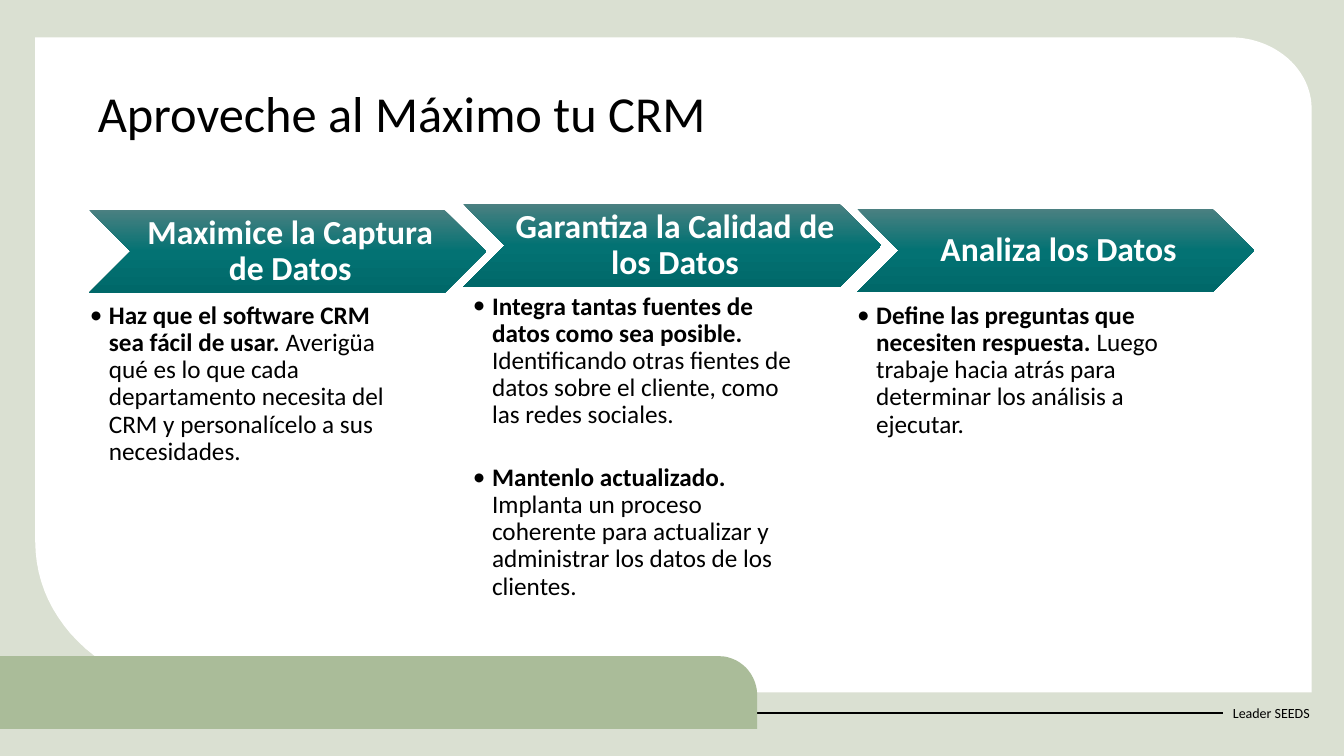
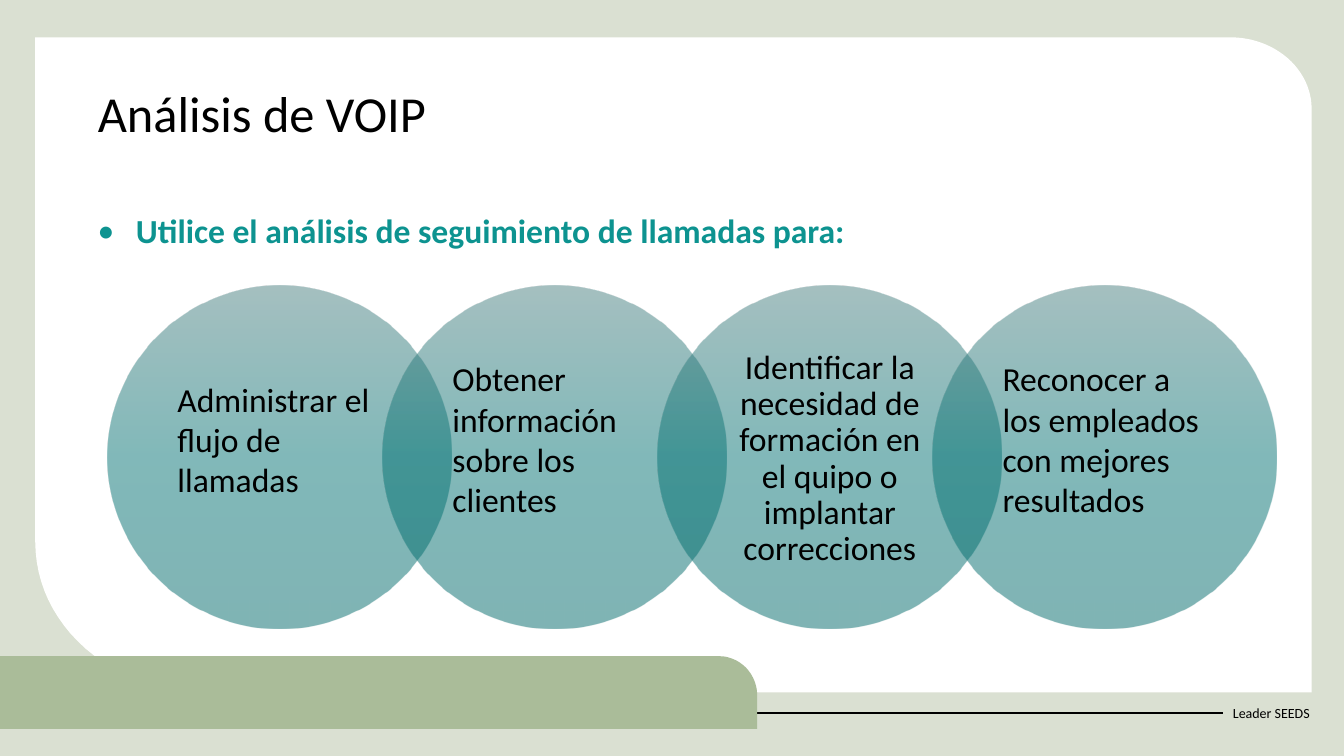
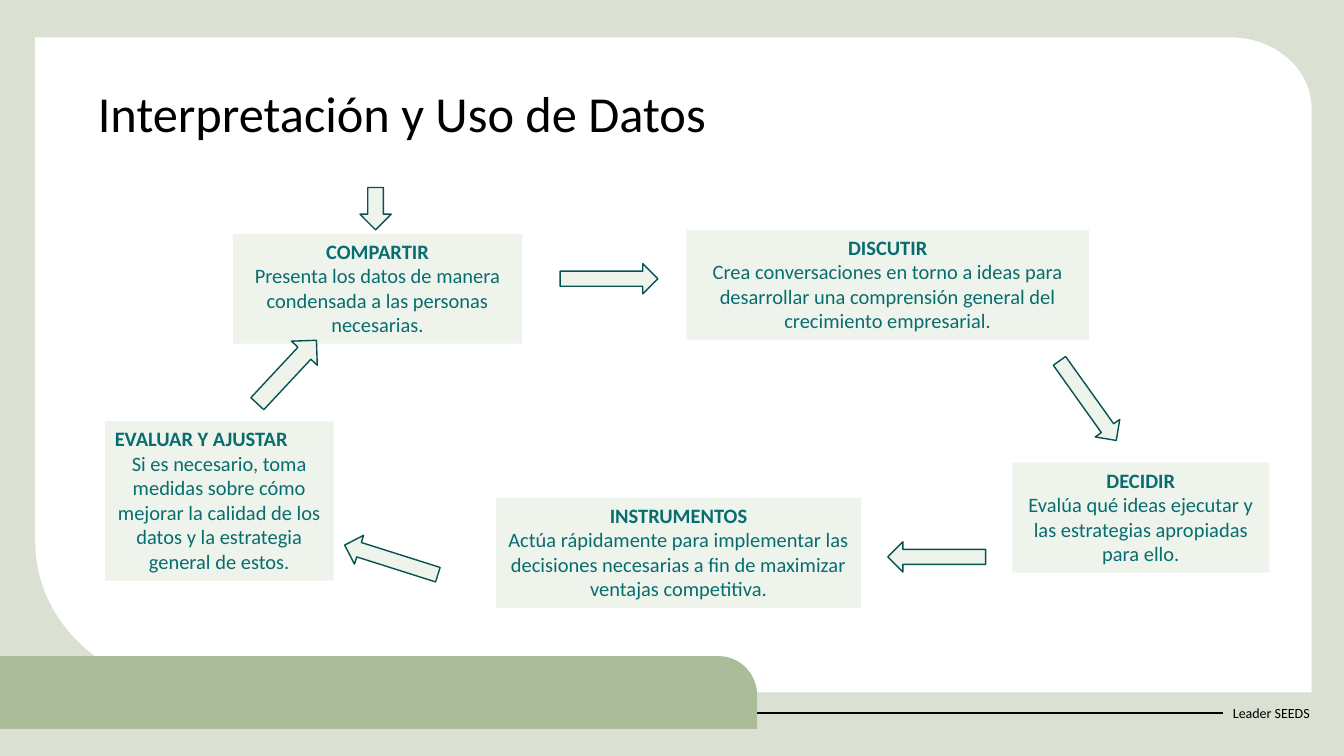
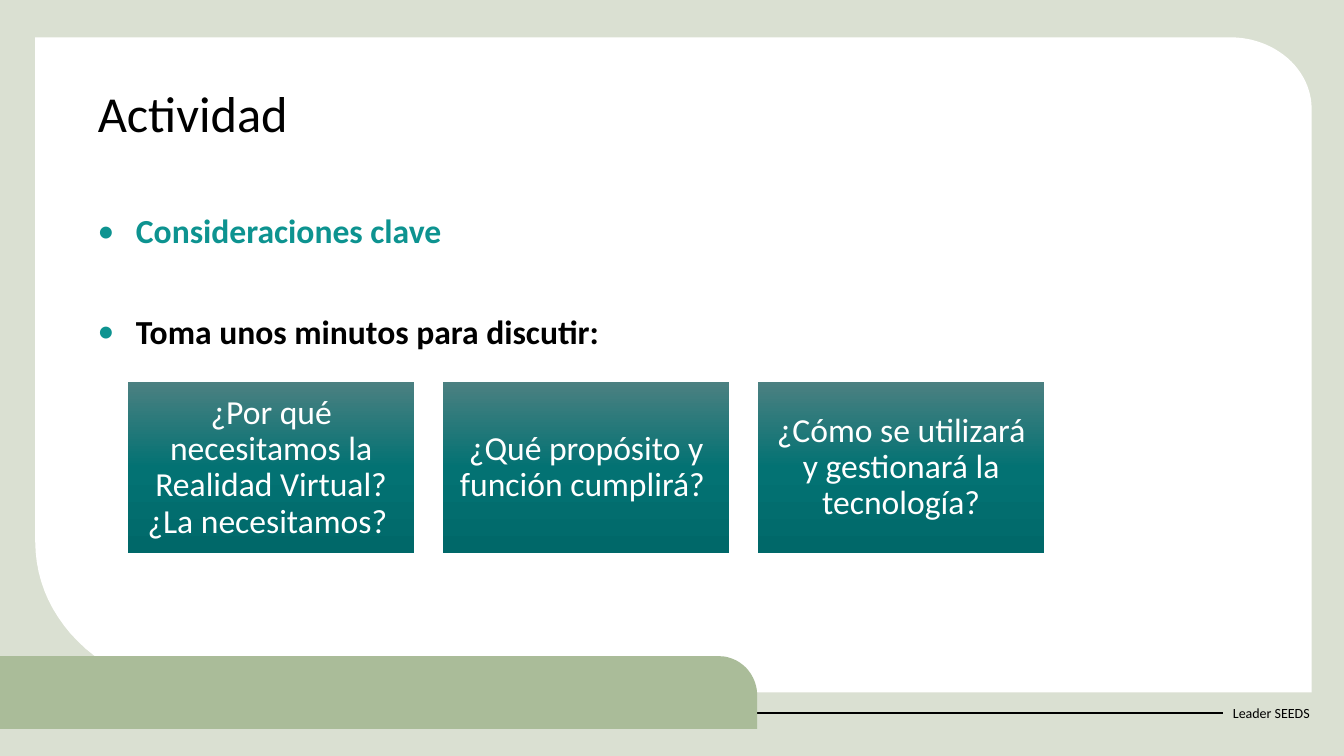
from dataclasses import dataclass
from math import cos, radians, sin

from lxml.etree import SubElement
from pptx import Presentation
from pptx.dml.color import RGBColor
from pptx.enum.shapes import MSO_CONNECTOR, MSO_SHAPE
from pptx.enum.text import MSO_ANCHOR, MSO_AUTO_SIZE, PP_ALIGN
from pptx.oxml.ns import qn
from pptx.util import Inches, Pt

WIDTH, HEIGHT = 13.33, 7.5
FONT = "Calibri"
BLACK, WHITE = "000000", "FFFFFF"
SAGE, LEAF, MIST = "DAE0D2", "AABC99", "EEF3EB"
TEAL, DEEP_TEAL, OUTLINE = "0D9390", "086D6E", "065151"
GRADIENT = {0: "4B8081", 50: "037273", 100: "006869"}
LEFT, CENTER = PP_ALIGN.LEFT, PP_ALIGN.CENTER
TOP, MIDDLE = MSO_ANCHOR.TOP, MSO_ANCHOR.MIDDLE
DEFAULT_INSETS = (0.1, 0.05, 0.1, 0.05)
UNITS_PER_INCH = 1000


@dataclass
class Para:
    """A paragraph whose spans are (text, bold) pairs."""
    spans: list
    align: PP_ALIGN = LEFT
    spacing: float = 0.9
    before: float = 0
    indent: float = 0
    bullet_color: str = BLACK
    color: str = BLACK


def rgb(value):
    return RGBColor.from_string(value)


def set_values(target, values):
    for name, value in values.items():
        setattr(target, name, value)


def place(shape, left, top, width, height):
    set_values(shape, {"left": Inches(left), "top": Inches(top),
                       "width": Inches(width), "height": Inches(height)})


def add_bullet(para, indent, color):
    props = para._p.get_or_add_pPr()
    props.set("marL", str(Inches(indent)))
    props.set("indent", str(-Inches(indent)))
    SubElement(SubElement(props, qn("a:buClr")), qn("a:srgbClr"), val=color)
    SubElement(props, qn("a:buFont"), typeface=FONT)
    SubElement(props, qn("a:buChar"), char="•")


def write(frame, paras, size, anchor=TOP, insets=DEFAULT_INSETS):
    set_values(frame, {"word_wrap": True, "auto_size": MSO_AUTO_SIZE.NONE,
                       "vertical_anchor": anchor})
    sides = ("left", "top", "right", "bottom")
    set_values(frame, {f"margin_{side}": Inches(inset) for side, inset in zip(sides, insets)})
    for index, item in enumerate(paras):
        para = frame.add_paragraph() if index else frame.paragraphs[0]
        if item.indent:
            add_bullet(para, item.indent, item.bullet_color)
        set_values(para, {"alignment": item.align, "line_spacing": item.spacing,
                          "space_before": Pt(item.before), "space_after": Pt(0)})
        for text, bold in item.spans:
            span = para.add_run()
            span.text = text
            set_values(span.font, {"name": FONT, "size": Pt(size), "bold": bold})
            span.font.color.rgb = rgb(item.color)


def add_text(page, area, paras, size, **options):
    box = page.shapes.add_textbox(*map(Inches, area))
    write(box.text_frame, paras, size, **options)
    return box


def add_solid(page, kind, area, fill, line=None):
    shape = page.shapes.add_shape(kind, *map(Inches, area))
    paint(shape, fill, line)
    return shape


def paint(shape, fill, line=None):
    shape.shadow.inherit = False
    shape.fill.solid()
    shape.fill.fore_color.rgb = rgb(fill)
    if line:
        shape.line.color.rgb = rgb(line)
        shape.line.width = Pt(1)
    else:
        shape.line.fill.background()


def add_gradient(page, kind, area, opacity=100):
    shape = page.shapes.add_shape(kind, *map(Inches, area))
    shape.shadow.inherit = False
    shape.line.fill.background()
    shape.fill.gradient()
    shape.fill.gradient_angle = 270
    stops = next(shape._element.spPr.iter(qn("a:gsLst")))
    for stop in list(stops):
        stops.remove(stop)
    for position, value in GRADIENT.items():
        stop = SubElement(stops, qn("a:gs"), pos=str(position * 1000))
        color = SubElement(stop, qn("a:srgbClr"), val=value)
        if opacity < 100:
            SubElement(color, qn("a:alpha"), val=str(opacity * 1000))
    return shape


def corner(center_x, center_y, radius_x, radius_y, start, steps=24):
    """Points of a quarter ellipse, clockwise from the start angle in degrees."""
    angles = [radians(start + 90 * step / steps) for step in range(steps + 1)]
    return [(center_x + radius_x * cos(angle), center_y + radius_y * sin(angle))
            for angle in angles]


def add_outline(page, points, fill):
    """A closed outline; whole-number units keep its curves fine."""
    units = [(round(x * UNITS_PER_INCH), round(y * UNITS_PER_INCH)) for x, y in points]
    builder = page.shapes.build_freeform(*units[0], scale=Inches(1) / UNITS_PER_INCH)
    builder.add_line_segments(units[1:], close=True)
    shape = builder.convert_to_shape()
    paint(shape, fill)
    return shape


def build_frame(layout, page):
    """Draw the shared frame on a page and move it to the layout."""
    layout.background.fill.solid()
    layout.background.fill.fore_color.rgb = rgb(SAGE)
    for holder in list(layout.placeholders)[1:]:
        holder._element.getparent().remove(holder._element)

    panel = add_outline(page, [(0.35, 0.37), *corner(12.2, 1.08, 0.81, 0.71, 270),
                               (13.01, 6.87), *corner(2.05, 5.38, 1.7, 1.49, 90)], WHITE)
    footer = add_text(page, (12.13, 6.87, 1.01, 0.4),
                      [Para([("Leader SEEDS", False)], spacing=1)], 10, anchor=MIDDLE)
    rule = page.shapes.add_connector(MSO_CONNECTOR.STRAIGHT, 0, Inches(7.07),
                                     Inches(12.13), Inches(7.07))
    rule.line.color.rgb = rgb(BLACK)
    rule.line.width = Pt(1.5)
    SubElement(rule._element.spPr, qn("a:effectLst"))
    tab = add_outline(page, [(0, 7.23), (0, 6.51), *corner(7.13, 6.9, 0.38, 0.39, 270),
                             (7.51, 7.23)], LEAF)
    for shape in (panel, footer, rule, tab):
        layout.shapes._spTree.append(shape._element)


def add_page(deck, title):
    page = deck.slides.add_slide(deck.slide_layouts[5])
    place(page.shapes.title, 0.87, 0.83, 11.59, 0.88)
    write(page.shapes.title.text_frame, [Para([(title, False)])], 36)
    return page


def add_points(page, points):
    """Bold bulleted lines, given as (text, color) pairs, under the title."""
    paras = [Para([(text, True)], before=46 if index else 0, indent=0.38,
                  bullet_color=TEAL, color=color)
             for index, (text, color) in enumerate(points)]
    add_text(page, (0.87, 2.08, 11.59, 1.6), paras, 24)


def add_chevron_column(page, chevron, heading, body, items):
    shape = add_gradient(page, MSO_SHAPE.CHEVRON, (*chevron, 0.83))
    write(shape.text_frame, [Para([(heading, True)], CENTER, color=WHITE)], 24,
          anchor=MIDDLE, insets=(0.1, 0.04, 0.04, 0.04))
    paras = [Para([(lead, True), (rest, False)], indent=0.19, before=25 if index else 0)
             for index, (lead, rest) in enumerate(items)]
    add_text(page, (*body, 3.18, 3.25), paras, 18, insets=(0, 0, 0, 0))


def add_circles(page, labels, size=3.41):
    for index, (text, align) in enumerate(labels):
        circle = add_gradient(page, MSO_SHAPE.OVAL,
                              (1.07 + 0.8 * size * index, 2.83, size, size), opacity=50)
        spacing, bottom = (0.9, 0.03) if align == CENTER else (1, 0.43)
        write(circle.text_frame, [Para([(text, False)], align, spacing)], 24,
              anchor=MIDDLE, insets=(0.19, 0.07, 0.19, bottom))


def add_step(page, area, heading, text, heading_align=CENTER):
    box = add_solid(page, MSO_SHAPE.RECTANGLE, area, MIST)
    write(box.text_frame, [Para([(heading, True)], heading_align, 1, color=DEEP_TEAL),
                           Para([(text, False)], CENTER, 1, color=DEEP_TEAL)], 14.6)


def add_arrow(page, area, rotation):
    arrow = add_solid(page, MSO_SHAPE.DOWN_ARROW, area, MIST, OUTLINE)
    arrow.rotation = rotation


def add_questions(page, questions, width=2.84):
    for index, question in enumerate(questions):
        box = add_gradient(page, MSO_SHAPE.RECTANGLE,
                           (1.27 + 1.1 * width * index, 3.79, width, 1.7))
        write(box.text_frame, [Para([(question, False)], CENTER, color=WHITE)], 24,
              anchor=MIDDLE, insets=(0.1, 0.1, 0.1, 0.1))


def fill_crm(page):
    add_chevron_column(page, (0.88, 2.08, 3.94), "Maximice la Captura de Datos", (0.89, 3), [
        ("Haz que el software CRM sea fácil de usar. ",
         "Averigüa qué es lo que cada departamento necesita del CRM "
         "y personalícelo a sus necesidades.")])
    add_chevron_column(page, (4.59, 2.02, 4.15), "Garantiza la Calidad de los Datos", (4.69, 2.91), [
        ("Integra tantas fuentes de datos como sea posible. ",
         "Identificando otras fientes de datos sobre el cliente, como las redes sociales."),
        ("Mantenlo actualizado. ",
         "Implanta un proceso coherente para actualizar y administrar los datos de los clientes.")])
    add_chevron_column(page, (8.5, 2.07, 3.94), "Analiza los Datos", (8.5, 3), [
        ("Define las preguntas que necesiten respuesta. ",
         "Luego trabaje hacia atrás para determinar los análisis a ejecutar.")])


def fill_voip(page):
    add_points(page, [("Utilice el análisis de seguimiento de llamadas para:", TEAL)])
    add_circles(page, [
        ("Administrar el flujo de llamadas", LEFT),
        ("Obtener información sobre los clientes", LEFT),
        ("Identificar la necesidad de formación en el quipo o implantar correcciones", CENTER),
        ("Reconocer a los empleados con mejores resultados", LEFT)])


def fill_cycle(page):
    steps = [
        ((1.04, 4.18, 2.27, 1.58), "EVALUAR Y AJUSTAR",
         "Si es necesario, toma medidas sobre cómo mejorar la calidad de los datos "
         "y la estrategia general de estos.", LEFT),
        ((2.31, 2.32, 2.87, 1.09), "COMPARTIR",
         "Presenta los datos de manera condensada a las personas necesarias."),
        ((6.81, 2.28, 3.99, 1.09), "DISCUTIR",
         "Crea conversaciones en torno a ideas para desarrollar una comprensión general "
         "del crecimiento empresarial."),
        ((10.04, 4.59, 2.55, 1.09), "DECIDIR",
         "Evalúa qué ideas ejecutar y las estrategias apropiadas para ello."),
        ((4.92, 4.94, 3.62, 1.09), "INSTRUMENTOS",
         "Actúa rápidamente para implementar las decisiones necesarias a fin de maximizar "
         "ventajas competitiva."),
    ]
    for step in steps:
        add_step(page, *step)
    arrows = [
        ((10.64, 3.49, 0.3, 0.97), 324.5),
        ((5.89, 2.28, 0.3, 0.97), 270),
        ((3.73, 5.07, 0.3, 0.97), 107.6),
        ((9.14, 5.04, 0.3, 0.97), 90),
        ((3.57, 1.86, 0.31, 0.42), 0),
        ((2.67, 3.26, 0.35, 0.86), 223),
    ]
    for arrow in arrows:
        add_arrow(page, *arrow)


def fill_activity(page):
    add_points(page, [("Consideraciones clave", TEAL),
                      ("Toma unos minutos para discutir:", BLACK)])
    add_questions(page, ["¿Por qué necesitamos la Realidad Virtual? ¿La necesitamos? ",
                         "¿Qué propósito y función cumplirá? ",
                         "¿Cómo se utilizará y gestionará la tecnología?"])


def main():
    deck = Presentation()
    deck.slide_width, deck.slide_height = Inches(WIDTH), Inches(HEIGHT)
    contents = {
        "Aproveche al Máximo tu CRM": fill_crm,
        "Análisis de VOIP": fill_voip,
        "Interpretación y Uso de Datos": fill_cycle,
        "Actividad": fill_activity,
    }
    pages = [add_page(deck, title) for title in contents]
    build_frame(deck.slide_layouts[5], pages[0])
    for page, fill_page in zip(pages, contents.values()):
        fill_page(page)
    deck.save("out.pptx")


if __name__ == "__main__":
    main()
